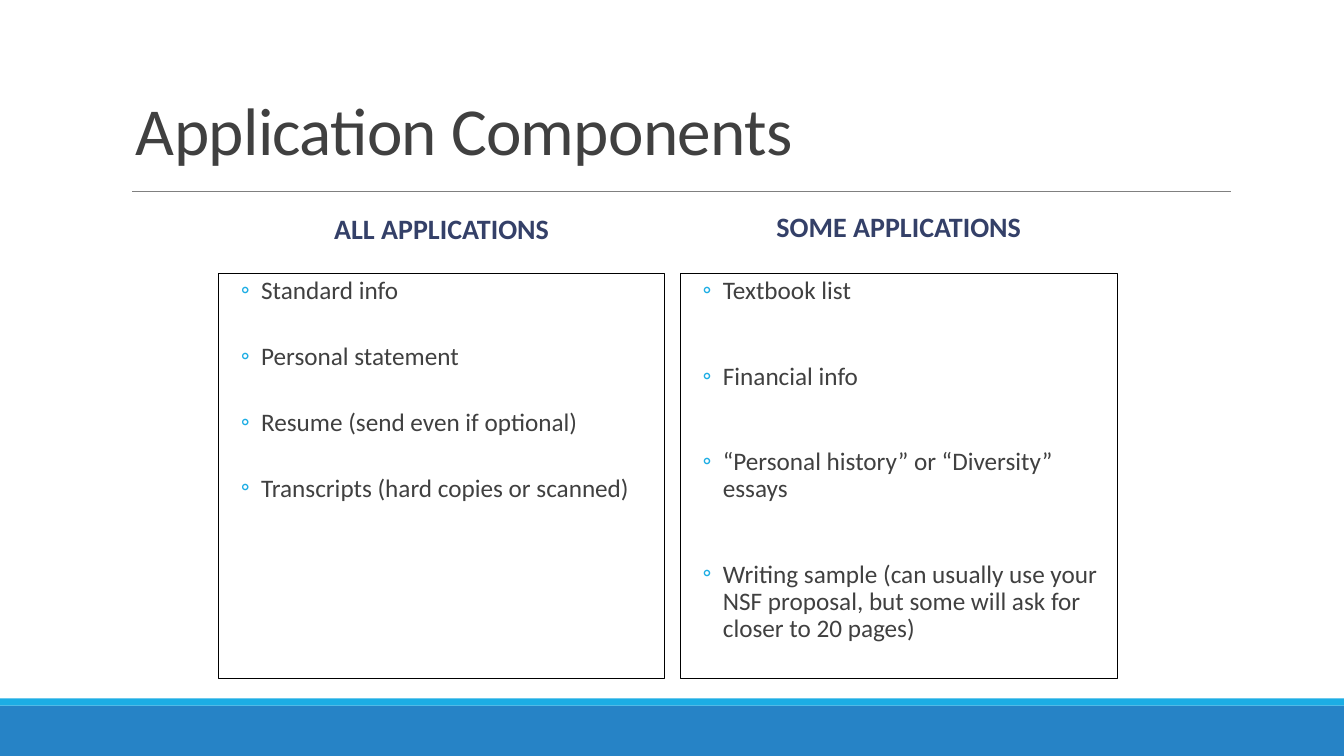
from pptx import Presentation
from pptx.dml.color import RGBColor
from pptx.enum.shapes import MSO_CONNECTOR as CONN, MSO_SHAPE as SHAPE
from pptx.enum.text import MSO_ANCHOR as ANCHOR, PP_ALIGN as ALIGN
from pptx.oxml import parse_xml
from pptx.oxml.ns import nsdecls
from pptx.util import Inches, Pt

FONT = "Calibri"
DARK, NAVY, CYAN, BLUE = "404040", "344068", "1CADE4", "2683C6"
COLUMNS = [
    (2.17, 4.42, 1.87, "ALL APPLICATIONS", 27.5,
     ["Standard info", "Personal statement", "Resume (send even if optional)",
      "Transcripts (hard copies or scanned)"]),
    (6.75, 4.33, 1.84, "SOME APPLICATIONS", 41.5,
     ["Textbook list", "Financial info",
      "“Personal history” or “Diversity” essays",
      "Writing sample (can usually use your NSF proposal, "
      "but some will ask for closer to 20 pages)"]),
]
BOX_TOP, BOX_BOTTOM = 2.71, 6.73


def rgb(color):
    """Return the colour for a hex string."""
    return RGBColor.from_string(color)


def add_rect(s, x, y, w, h, fill=None, line=None):
    """Add a flat rectangle with an optional fill and outline."""
    sp = s.shapes.add_shape(SHAPE.RECTANGLE, Inches(x), Inches(y), Inches(w), Inches(h))
    sp.shadow.inherit = False
    if fill:
        sp.fill.solid()
        sp.fill.fore_color.rgb = rgb(fill)
    else:
        sp.fill.background()
    if line:
        sp.line.color.rgb = rgb(line)
        sp.line.width = Pt(0.75)
    else:
        sp.line.fill.background()
    return sp


def add_rule(s, x1, x2, y):
    """Add the thin horizontal line under the title."""
    ln = s.shapes.add_connector(CONN.STRAIGHT, Inches(x1), Inches(y), Inches(x2), Inches(y))
    ln.line.color.rgb = rgb("808080")
    ln.line.width = Pt(0.5)
    ln._element.spPr.append(parse_xml(f"<a:effectLst {nsdecls('a')}/>"))


def write(p, text, size=18, color=DARK, bold=False, align=ALIGN.LEFT,
          leading=0.9, before=0, after=0, tracking=0):
    """Write formatted text into a paragraph."""
    p.alignment, p.line_spacing = align, leading
    p.space_before, p.space_after = Pt(before), Pt(after)
    r = p.add_run()
    r.text = text
    r.font.name, r.font.size, r.font.bold = FONT, Pt(size), bold
    r.font.color.rgb = rgb(color)
    if tracking:
        r.font._element.set("spc", str(round(tracking * 100)))


def add_label(s, x, y, w, h, text, anchor, **fmt):
    """Add a one-paragraph text box."""
    tf = s.shapes.add_textbox(Inches(x), Inches(y), Inches(w), Inches(h)).text_frame
    tf.word_wrap, tf.vertical_anchor = True, anchor
    write(tf.paragraphs[0], text, **fmt)


def set_bullet(p):
    """Give a paragraph a hanging ring bullet."""
    pPr = p._p.get_or_add_pPr()
    pPr.set("marL", str(Inches(0.42)))
    pPr.set("indent", str(Inches(-0.2)))
    for tag in (f'<a:buClr {nsdecls("a")}><a:srgbClr val="{CYAN}"/></a:buClr>',
                f'<a:buFont {nsdecls("a")} typeface="{FONT}"/>',
                f'<a:buChar {nsdecls("a")} char="◦"/>'):
        pPr.append(parse_xml(tag))


def add_list(s, x, w, items, gap):
    """Add an outlined box holding a bulleted list."""
    tf = add_rect(s, x, BOX_TOP, w, BOX_BOTTOM - BOX_TOP, line="000000").text_frame
    tf.word_wrap, tf.vertical_anchor = True, ANCHOR.TOP
    tf.margin_left = tf.margin_right = 0
    tf.margin_top = tf.margin_bottom = Inches(0.05)
    for i, item in enumerate(items):
        p = tf.add_paragraph() if i else tf.paragraphs[0]
        write(p, item, after=gap)
        set_bullet(p)


def main():
    """Build and save the slide."""
    prs = Presentation()
    prs.slide_width, prs.slide_height = Inches(13.33), Inches(7.5)
    s = prs.slides.add_slide(prs.slide_layouts[6])
    add_rect(s, 0, 7, 13.33, 0.5, fill=BLUE)
    add_rect(s, 0, 6.93, 13.33, 0.07, fill=CYAN)
    add_rule(s, 1.31, 12.21, 1.9)
    add_label(s, 1.25, 0.83, 11, 0.9, "Application Components", ANCHOR.BOTTOM,
              size=48, leading=0.85, tracking=-0.5)
    for x, w, top, heading, gap, items in COLUMNS:
        add_label(s, x, top, w, 2.7 - top, heading, ANCHOR.MIDDLE, size=20,
                  color=NAVY, bold=True, align=ALIGN.CENTER, before=12, after=2)
        add_list(s, x, w, items, gap)
    prs.save("out.pptx")


if __name__ == "__main__":
    main()
